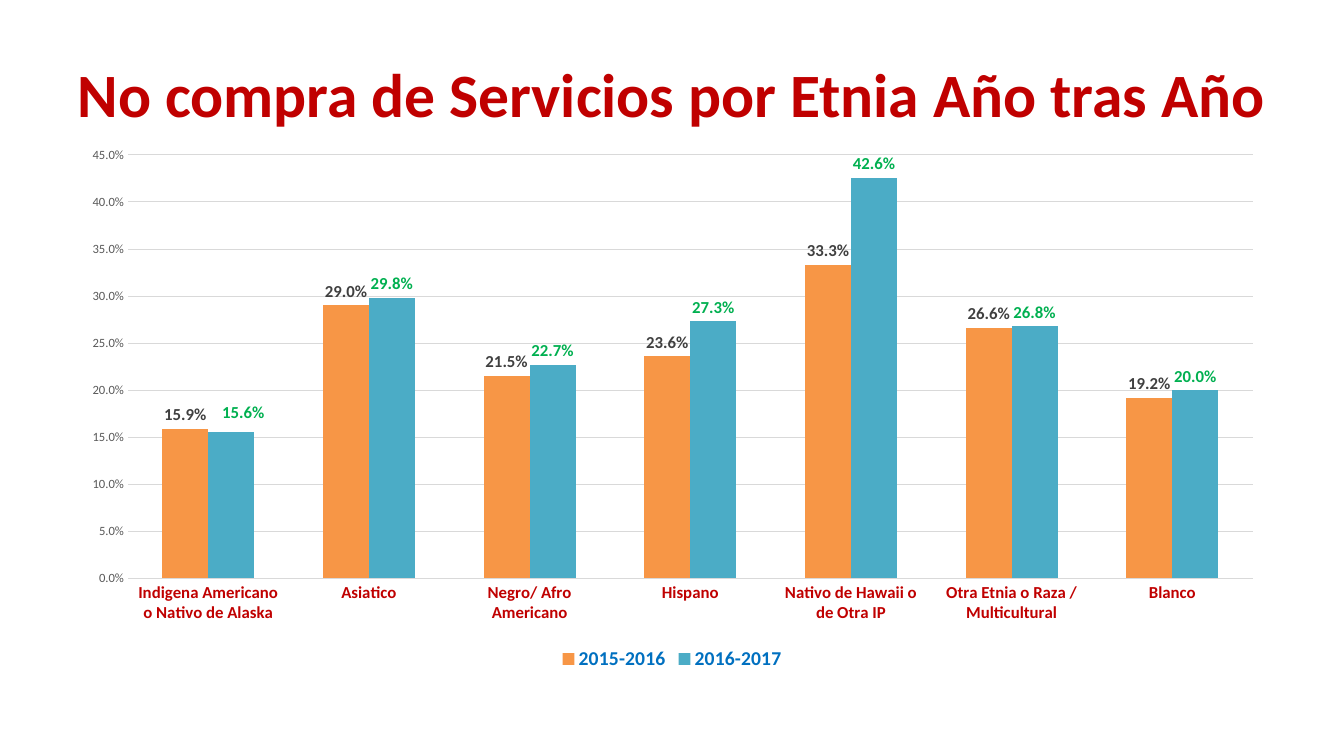
from lxml.etree import SubElement, Element
from pptx import Presentation
from pptx.chart.data import CategoryChartData
from pptx.dml.color import RGBColor
from pptx.enum.chart import XL_CHART_TYPE as ChartType
from pptx.enum.chart import XL_LABEL_POSITION as LabelPosition
from pptx.enum.chart import XL_LEGEND_POSITION as LegendPosition
from pptx.enum.chart import XL_TICK_MARK as TickMark
from pptx.enum.text import MSO_ANCHOR as Anchor
from pptx.enum.text import PP_ALIGN as Align
from pptx.oxml.ns import qn
from pptx.util import Cm, Pt

FONT = "Calibri"
RED = "C00000"
PERCENT = "0.0%"
CATEGORIES = [
    "Indigena Americano o Nativo de Alaska",
    "Asiatico",
    "Negro/ Afro Americano",
    "Hispano",
    "Nativo de Hawaii o de Otra IP",
    "Otra Etnia o Raza / Multicultural",
    "Blanco",
]
YEARS = [
    ("2015-2016", [0.159, 0.29, 0.215, 0.236, 0.333, 0.266, 0.192], "F79646", "404040"),
    ("2016-2017", [0.156, 0.298, 0.227, 0.273, 0.426, 0.268, 0.2], "4BACC6", "00B050"),
]


def color(hex_value):
    return RGBColor.from_string(hex_value)


def style_font(font, size, hex_value, bold=False):
    font.name = FONT
    font.size = Pt(size)
    font.bold = bold
    font.color.rgb = color(hex_value)


def add_text(page, box, text, size=18, hex_value="000000", bold=False, align=Align.LEFT):
    frame = page.shapes.add_textbox(*box).text_frame
    frame.word_wrap = True
    frame.vertical_anchor = Anchor.MIDDLE
    para = frame.paragraphs[0]
    para.alignment = align
    span = para.add_run()
    span.text = text
    style_font(span.font, size, hex_value, bold)


def make_layout(**settings):
    layout = Element(qn("c:layout"))
    manual = SubElement(layout, qn("c:manualLayout"))
    for name, value in settings.items():
        SubElement(manual, qn(f"c:{name}")).set("val", str(value))
    return layout


def style_axes(chart):
    category_axis, value_axis = chart.category_axis, chart.value_axis
    for axis in (category_axis, value_axis):
        axis.major_tick_mark = axis.minor_tick_mark = TickMark.NONE
        axis.format.line.fill.background()
    style_font(category_axis.tick_labels.font, 12, RED, True)
    style_font(value_axis.tick_labels.font, 9, "595959")
    value_axis.tick_labels.number_format = PERCENT
    value_axis.tick_labels.number_format_is_linked = False
    value_axis.minimum_scale, value_axis.maximum_scale = 0, 0.45
    value_axis.major_unit = 0.05
    grid = value_axis.major_gridlines.format.line
    grid.color.rgb = color("D9D9D9")
    grid.width = Pt(0.75)


def style_series(series, fill, label_color):
    series.format.fill.solid()
    series.format.fill.fore_color.rgb = color(fill)
    series.invert_if_negative = False
    labels = series.data_labels
    labels.show_value = True
    labels.number_format = PERCENT
    labels.number_format_is_linked = False
    labels.position = LabelPosition.OUTSIDE_END
    style_font(labels.font, 12, label_color, True)


def shift_first_label(series, label_color):
    label = series.points[0].data_label
    style_font(label.font, 12, label_color, True)
    label.position = LabelPosition.OUTSIDE_END
    index = series._element.xpath(".//c:dLbl/c:idx")[0]
    index.addnext(make_layout(x=0.01, y=-0.01))


def add_ethnicity_chart(page, box):
    data = CategoryChartData(number_format=PERCENT)
    data.categories = CATEGORIES
    for name, values, _, _ in YEARS:
        data.add_series(name, values)
    chart = page.shapes.add_chart(ChartType.COLUMN_CLUSTERED, *box, data).chart
    chart.has_title = False
    style_font(chart.font, 10, "000000")
    style_axes(chart)
    plot = chart.plots[0]
    plot.gap_width, plot.overlap = 150, 0
    plot.vary_by_categories = False
    for series, (_, _, fill, label_color) in zip(plot.series, YEARS):
        style_series(series, fill, label_color)
    shift_first_label(plot.series[1], YEARS[1][3])
    chart.has_legend = True
    chart.legend.position = LegendPosition.BOTTOM
    chart.legend.include_in_layout = False
    style_font(chart.legend.font, 14, "0070C0", True)
    area = chart._chartSpace.xpath("c:chart/c:plotArea")[0]
    for old in area.xpath("c:layout"):
        area.remove(old)
    area.insert(0, make_layout(layoutTarget="inner", xMode="edge", yMode="edge",
                               x=0.05, y=0.03, w=0.93, h=0.79))


def build_chart_page(page, left, top, width):
    add_text(page, (left, top, width, Cm(3.18)),
             "No compra de Servicios por Etnia Año tras Año",
             size=44, hex_value=RED, bold=True, align=Align.CENTER)
    add_ethnicity_chart(page, (left, top + Cm(2.74), width, Cm(13.51)))


def main():
    deck = Presentation()
    deck.slide_width, deck.slide_height = Cm(33.87), Cm(19.05)
    page = deck.slides.add_slide(deck.slide_layouts[6])
    build_chart_page(page, Cm(1.7), Cm(0.76), Cm(30.48))
    deck.save("out.pptx")


if __name__ == "__main__":
    main()
